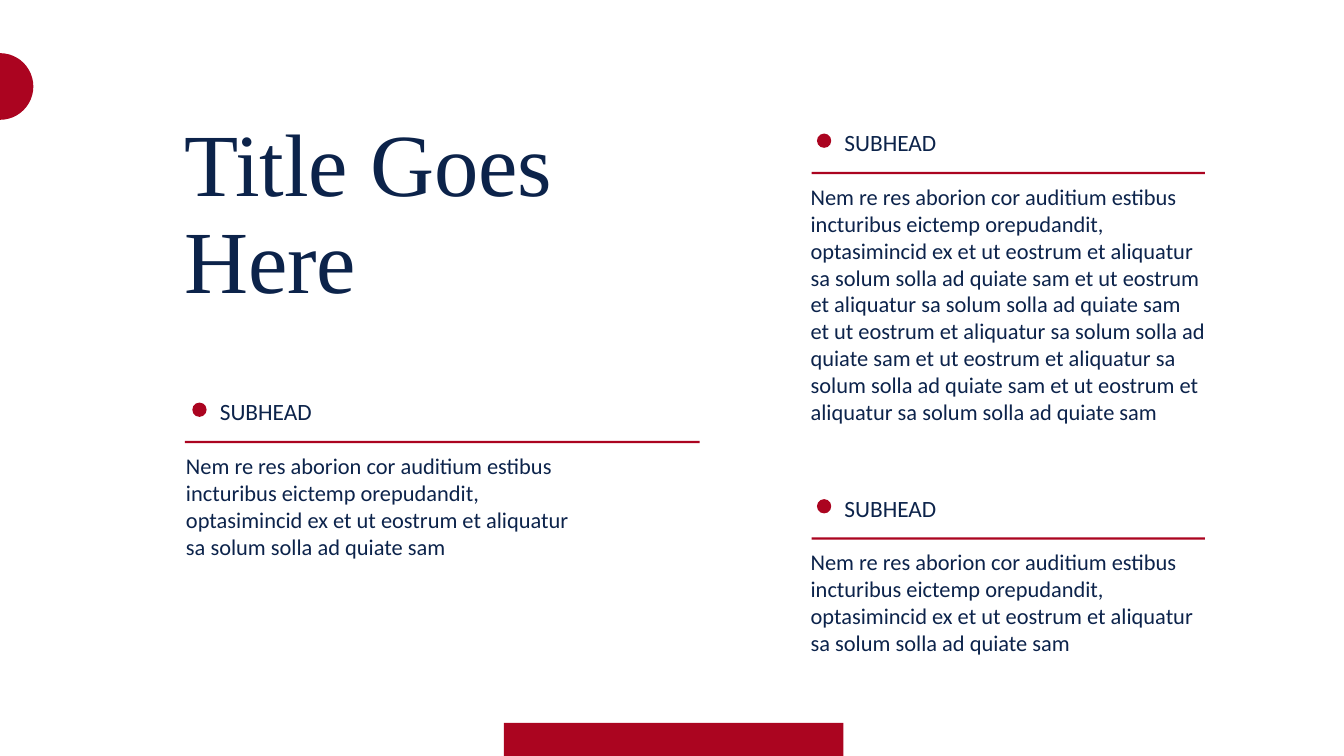
import pptx
import pptx.dml.color
import pptx.enum.shapes
import pptx.enum.text
import pptx.util
from pptx.util import Cm

RED = "AB0420"
NAVY = "0C234A"
INTRO = (
    "Nem re res aborion cor auditium estibus incturibus eictemp orepudandit, "
    "optasimincid ex et ut eostrum et aliquatur sa solum solla ad quiate sam"
)
REFRAIN = "et ut eostrum et aliquatur sa solum solla ad quiate sam"


def color(hex_string):
    """Turn a hex string into an RGB colour."""
    return pptx.dml.color.RGBColor.from_string(hex_string)


def add_accent(slide, kind, left, top, width, height, fill=RED):
    """Add a flat preset shape without outline or shadow."""
    accent = slide.shapes.add_shape(kind, left, top, width, height)
    accent.shadow.inherit = False
    accent.fill.solid()
    accent.fill.fore_color.rgb = color(fill)
    accent.line.fill.background()


def write(frame, paragraphs, font_name, size, hex_string, inset_top):
    """Fill a text frame with left-aligned, top-anchored paragraphs."""
    frame.word_wrap = True
    frame.auto_size = pptx.enum.text.MSO_AUTO_SIZE.NONE
    frame.vertical_anchor = pptx.enum.text.MSO_ANCHOR.TOP
    frame.margin_left = frame.margin_right = frame.margin_bottom = 0
    frame.margin_top = inset_top
    for index, wording in enumerate(paragraphs):
        paragraph = frame.add_paragraph() if index else frame.paragraphs[0]
        paragraph.alignment = pptx.enum.text.PP_ALIGN.LEFT
        run = paragraph.add_run()
        run.text = wording
        run.font.name = font_name
        run.font.size = pptx.util.Pt(size)
        run.font.color.rgb = color(hex_string)


def add_title(slide, left, top, width, height):
    """Place the slide title in its placeholder."""
    title = slide.shapes.title
    title.left, title.top, title.width, title.height = left, top, width, height
    write(title.text_frame, ["Title Goes Here"], "Times New Roman", 95, NAVY, Cm(0.6))
    title.text_frame.paragraphs[0].line_spacing = pptx.util.Pt(104.1)


def add_section(slide, left, top, rule_width, body_height, paragraphs, indent=0):
    """Place a dotted subhead, its rule and the body text below it."""
    shapes = pptx.enum.shapes.MSO_SHAPE
    text_left = left + indent
    add_accent(slide, shapes.OVAL, text_left + Cm(0.2), top + Cm(0.25), Cm(0.54), Cm(0.54))
    subhead = slide.shapes.add_textbox(text_left + Cm(1.24), top, Cm(7.2), Cm(1.12))
    write(subhead.text_frame, ["SUBHEAD"], "Calibri", 25, NAVY, Cm(0.06))
    add_accent(slide, shapes.RECTANGLE, left, top + Cm(1.7), rule_width, Cm(0.08))
    body = slide.shapes.add_textbox(text_left - Cm(0.04), top + Cm(1.97), Cm(14.91), body_height)
    write(body.text_frame, paragraphs, "Calibri", 24, "0C234B", Cm(0.15))


def main():
    """Build and save the slide."""
    presentation = pptx.Presentation()
    presentation.slide_width = Cm(50.8)
    presentation.slide_height = Cm(28.58)
    slide = presentation.slides.add_slide(presentation.slide_layouts[5])
    shapes = pptx.enum.shapes.MSO_SHAPE

    add_accent(slide, shapes.RECTANGLE, Cm(19.05), Cm(27.33), Cm(12.83), Cm(1.37), "AB0520")
    add_accent(slide, shapes.OVAL, Cm(-1.26), Cm(2.01), Cm(2.52), Cm(2.52))
    add_title(slide, Cm(6.96), Cm(3.81), Cm(18.77), Cm(7.82))

    long_body = [f"{INTRO} {REFRAIN}", " ".join([REFRAIN] * 3)]
    add_section(slide, Cm(6.99), Cm(14.97), Cm(19.46), Cm(4.27), [INTRO], Cm(0.08))
    add_section(slide, Cm(30.68), Cm(4.8), Cm(14.86), Cm(9.4), long_body)
    add_section(slide, Cm(30.68), Cm(18.62), Cm(14.86), Cm(4.27), [INTRO])

    presentation.save("out.pptx")


if __name__ == "__main__":
    main()
